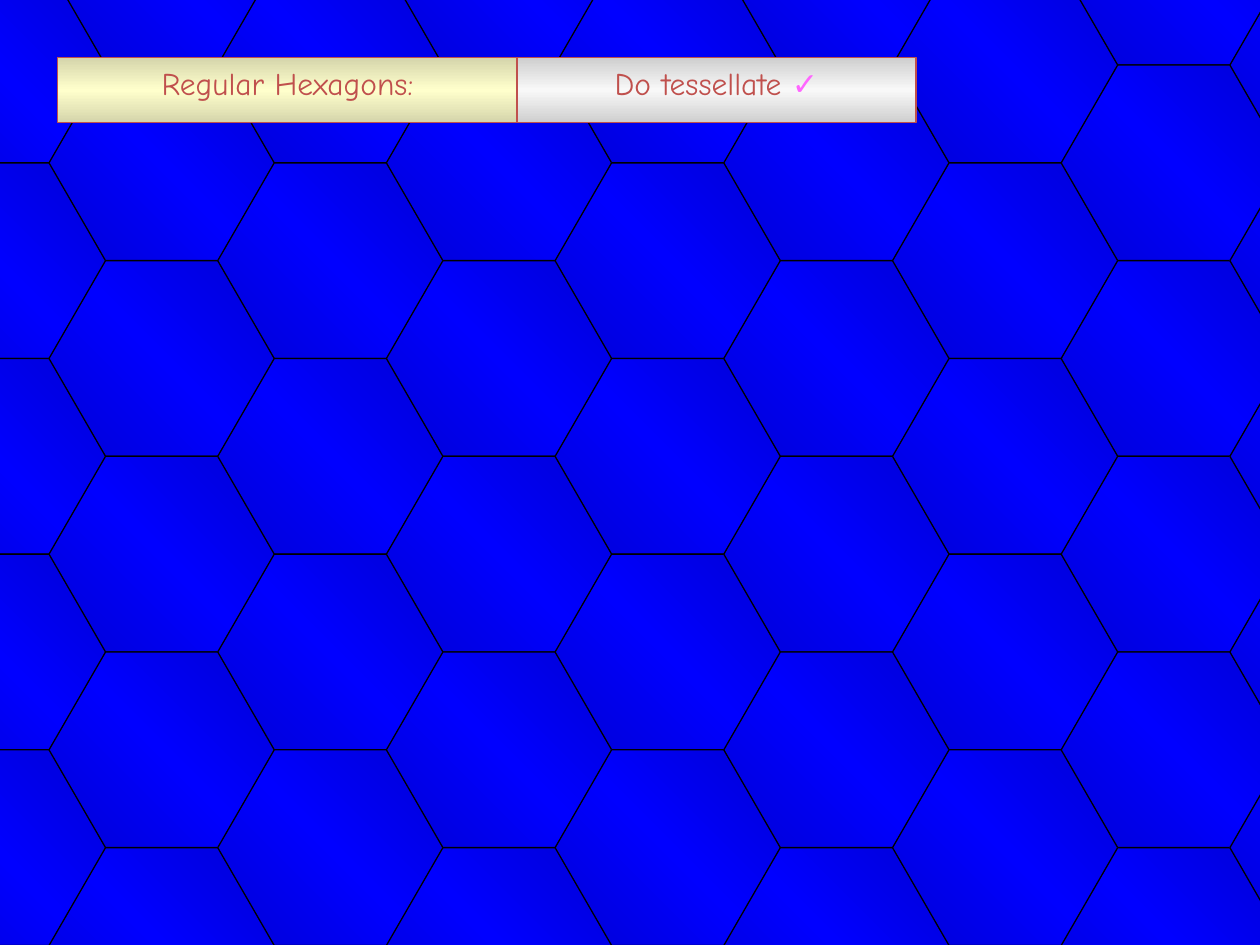
import copy
from dataclasses import dataclass

import pptx
import pptx.dml.color
import pptx.enum.shapes
import pptx.enum.text
import pptx.oxml.ns
import pptx.util

Pt = pptx.util.Pt
MSO_SHAPE = pptx.enum.shapes.MSO_SHAPE


@dataclass(frozen=True)
class Gradient:
    edge: str
    middle: str
    angle: float  # counter-clockwise degrees


@dataclass(frozen=True)
class Theme:
    tile: Gradient = Gradient("0000D5", "0000FF", 45)
    cream: Gradient = Gradient("D5D5AB", "FFFFCC", 270)
    silver: Gradient = Gradient("CFCFCF", "F8F8F8", 270)
    outline: str = "000000"
    red: str = "C0504D"
    pink: str = "FF66FF"
    font: str = "Comic Neue"
    text_size: float = 18
    line_width: float = 0.75


@dataclass(frozen=True)
class Box:
    x: float
    y: float
    w: float
    h: float


@dataclass(frozen=True)
class Label:
    box: Box
    gradient: Gradient
    runs: tuple[tuple[str, str], ...]  # text and colour


THEME = Theme()

HEX_W, HEX_H = 129.4, 111.8
COL_STEP = 96.4
LEFT = -68.4
EVEN_TOP, ODD_TOP = -18.7, -74.6
COLUMNS, EVEN_ROWS, ODD_ROWS = 9, 5, 6

LABELS = (
    Label(Box(33, 33, 262.6, 37), THEME.cream,
          (("Regular Hexagons:", THEME.red),)),
    Label(Box(295.4, 33, 228, 37), THEME.silver,
          (("Do tessellate ", THEME.red), ("✓", THEME.pink))),
)


def rgb(value: str) -> pptx.dml.color.RGBColor:
    return pptx.dml.color.RGBColor.from_string(value)


def fill_gradient(sp, gradient: Gradient) -> None:
    """Fill from edge to middle and back to edge."""
    sp.fill.gradient()
    sp.fill.gradient_angle = gradient.angle
    first, last = sp.fill.gradient_stops
    for stop, position, color in ((first, 0, gradient.edge),
                                  (last, 0.5, gradient.middle)):
        stop.position = position
        stop.color.rgb = rgb(color)
    stops = next(sp._element.spPr.iter(pptx.oxml.ns.qn("a:gsLst")))
    closing = copy.deepcopy(stops[0])
    closing.set("pos", "100000")
    stops.append(closing)


def add_box(s, kind: MSO_SHAPE, box: Box, gradient: Gradient, line: str):
    sp = s.shapes.add_shape(kind, Pt(box.x), Pt(box.y), Pt(box.w), Pt(box.h))
    sp.shadow.inherit = False
    fill_gradient(sp, gradient)
    sp.line.color.rgb = rgb(line)
    sp.line.width = Pt(THEME.line_width)
    return sp


def add_text(p, text: str, *, color: str, size: float = THEME.text_size,
             font: str = THEME.font) -> None:
    r = p.add_run()
    r.text = text
    r.font.name = font
    r.font.size = Pt(size)
    r.font.color.rgb = rgb(color)


def add_tessellation(s) -> None:
    """Cover the slide with columns that alternate by half a hexagon."""
    for col in range(COLUMNS):
        top, rows = (ODD_TOP, ODD_ROWS) if col % 2 else (EVEN_TOP, EVEN_ROWS)
        for row in range(rows):
            box = Box(LEFT + col * COL_STEP, top + row * HEX_H, HEX_W, HEX_H)
            sp = add_box(s, MSO_SHAPE.HEXAGON, box, THEME.tile, THEME.outline)
            sp.adjustments[0] = 0.289


def add_label(s, label: Label) -> None:
    sp = add_box(s, MSO_SHAPE.RECTANGLE, label.box, label.gradient, THEME.red)
    tf = sp.text_frame
    tf.word_wrap = True
    tf.vertical_anchor = pptx.enum.text.MSO_ANCHOR.TOP
    p = tf.paragraphs[0]
    p.alignment = pptx.enum.text.PP_ALIGN.CENTER
    for text, color in label.runs:
        add_text(p, text, color=color)


def main() -> None:
    prs = pptx.Presentation()
    prs.slide_width, prs.slide_height = Pt(720), Pt(540)
    s = prs.slides.add_slide(prs.slide_layouts[6])
    add_tessellation(s)
    for label in LABELS:
        add_label(s, label)
    prs.save("out.pptx")


if __name__ == "__main__":
    main()
